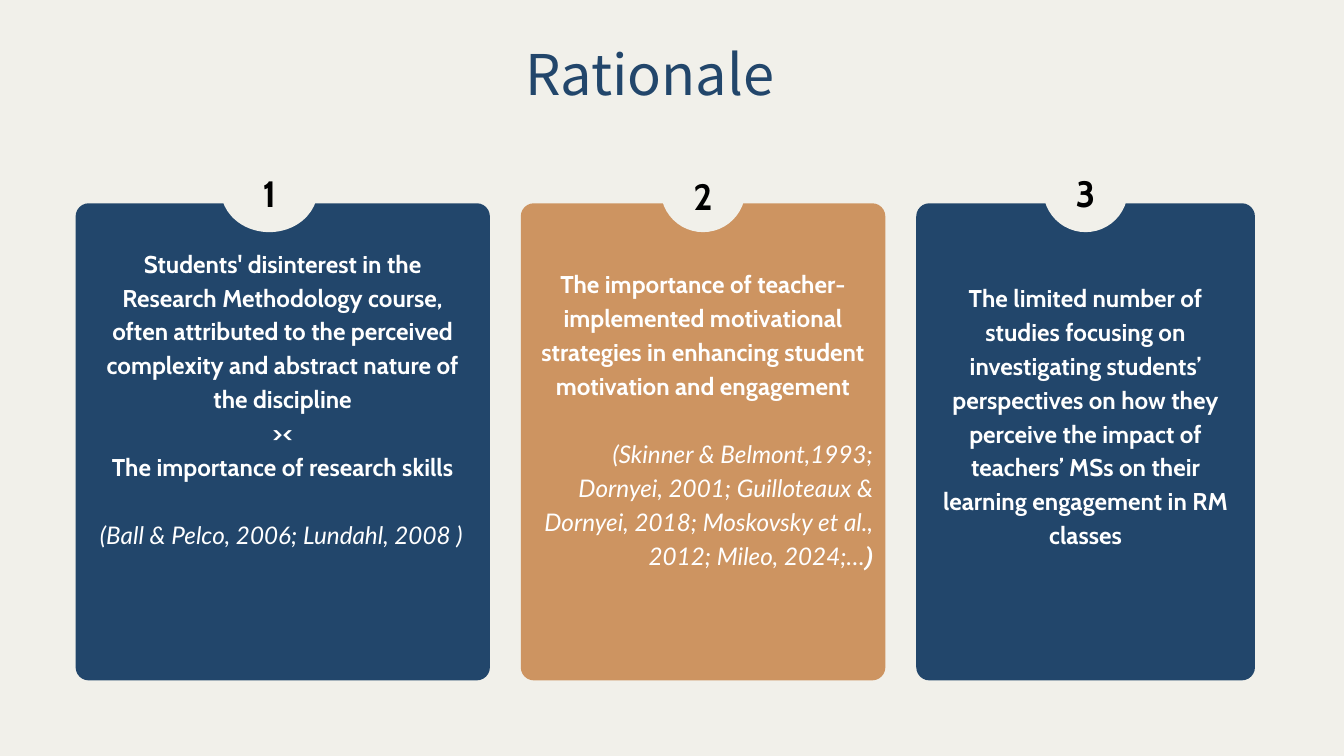
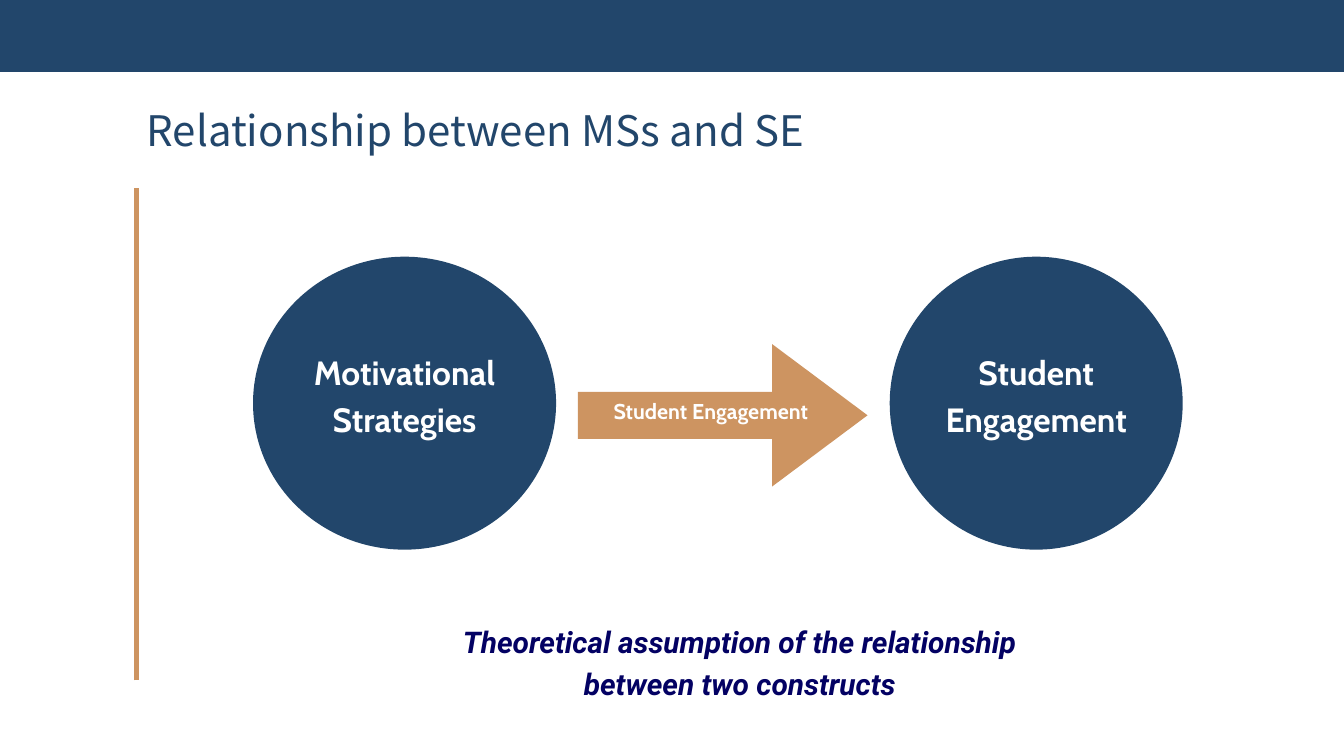
from dataclasses import dataclass

from lxml.etree import SubElement
from pptx import Presentation
from pptx.dml.color import RGBColor
from pptx.enum.shapes import MSO_CONNECTOR, MSO_SHAPE
from pptx.enum.text import MSO_ANCHOR, PP_ALIGN
from pptx.oxml.ns import qn
from pptx.util import Inches, Pt


@dataclass(frozen=True)
class Theme:
    """Colours and type styles shared by the slides."""
    navy = "22466B"
    tan = "CD9461"
    cream = "F1F0EA"
    white = "FFFFFF"

    # Each style: font, size, line pitch in points, colour, bold, italic
    title = dict(font="Noto Sans CJK SC", size=60, pitch=84, color=navy)
    heading = dict(title, size=45, pitch=54)
    number = dict(font="Cabin", size=39.2, pitch=61.6, color="000000", bold=True)
    body = dict(font="Cabin", size=26, pitch=36.4, color=white, bold=True)
    cite = dict(body, font="Lato", bold=False, italic=True)
    cite_end = dict(cite, font="Roboto", bold=True)
    node = dict(body, size=36, pitch=50.4)
    arrow = dict(body, size=23, pitch=32.2)
    caption = dict(font="Roboto", size=32, pitch=44.8, color="030163",
                   bold=True, italic=True)


@dataclass(frozen=True)
class Card:
    width: float
    fill: str
    paras: list
    text_top: float
    text_width: float
    notch_width: float = 5.04
    notch_shift: float = 0
    number_top: float = 9.36


def add_run(p, text, *, font, size, pitch, color, bold=False, italic=False):
    """Append formatted text to a paragraph."""
    p.line_spacing = Pt(pitch)
    r = p.add_run()
    r.text = text
    r.font.name, r.font.size = font, Pt(size)
    r.font.bold, r.font.italic = bold, italic
    r.font.color.rgb = RGBColor.from_string(color)


def para(*runs, align=PP_ALIGN.CENTER, before=0):
    """Describe a paragraph made of (text, style) runs."""
    return runs, align, before


class Deck:
    """Draws on a grid of 80 columns by 45 rows."""
    cols, rows = 80, 45

    def __init__(self, theme):
        self.theme = theme
        self.prs = Presentation()
        self.prs.slide_width, self.prs.slide_height = Inches(20), Inches(11.25)
        self.s = None

    def x(self, cols):
        return round(self.prs.slide_width * cols / self.cols)

    def y(self, rows):
        return round(self.prs.slide_height * rows / self.rows)

    def box(self, left, top, width, height):
        return self.x(left), self.y(top), self.x(width), self.y(height)

    def slide(self, color):
        self.s = self.prs.slides.add_slide(self.prs.slide_layouts[6])
        fill = self.s.background.fill
        fill.solid()
        fill.fore_color.rgb = RGBColor.from_string(color)

    def shape(self, kind, color, left, top, width, height, adjust=()):
        sp = self.s.shapes.add_shape(kind, *self.box(left, top, width, height))
        sp.shadow.inherit = False
        sp.fill.solid()
        sp.fill.fore_color.rgb = RGBColor.from_string(color)
        sp.line.fill.background()
        for i, value in enumerate(adjust):
            sp.adjustments[i] = value

    def text(self, paras, left, top, width, height, anchor=MSO_ANCHOR.TOP):
        tf = self.s.shapes.add_textbox(*self.box(left, top, width, height)).text_frame
        tf.word_wrap = True
        tf.vertical_anchor = anchor
        tf.margin_left = tf.margin_right = tf.margin_top = tf.margin_bottom = 0
        for i, (runs, align, before) in enumerate(paras):
            p = tf.add_paragraph() if i else tf.paragraphs[0]
            p.alignment = align
            if before:
                p.space_before = Pt(before)
            for text, style in runs:
                add_run(p, text, **style)

    def label(self, text, style, *area, anchor=MSO_ANCHOR.TOP):
        self.text([para((text, style))], *area, anchor=anchor)

    def line(self, color, weight, x1, y1, x2, y2):
        c = self.s.shapes.add_connector(
            MSO_CONNECTOR.STRAIGHT, self.x(x1), self.y(y1), self.x(x2), self.y(y2))
        c.line.color.rgb = RGBColor.from_string(color)
        c.line.width = Pt(weight)
        SubElement(c._element.spPr, qn("a:effectLst"))

    def card(self, number, card, left):
        """Rounded panel with a numbered notch in its top edge."""
        t, top, height, radius = self.theme, 12.1, 28.4, 0.78
        center = left + card.width / 2
        self.shape(MSO_SHAPE.ROUNDED_RECTANGLE, card.fill, left, top, card.width,
                   height, [radius / card.width])
        notch = center + card.notch_shift - card.notch_width / 2
        self.shape(MSO_SHAPE.OVAL, t.cream, notch, 8.78, card.notch_width, 5.04)
        self.label(str(number), t.number, notch, card.number_top, card.notch_width, 3.2)
        self.text(card.paras, center - card.text_width / 2, card.text_top,
                  card.text_width, top + height - card.text_top)

    def node(self, text, center, width):
        """Circle with a label slightly above its middle."""
        self.shape(MSO_SHAPE.OVAL, self.theme.navy, center - width / 2, 15.28,
                   width, 17.44)
        self.label(text, self.theme.node, center - 7, 15.6, 14, 15.5,
                   anchor=MSO_ANCHOR.MIDDLE)


def rationale(deck):
    t = deck.theme
    cite = dict(align=PP_ALIGN.RIGHT, before=t.body["pitch"])
    cards = [
        Card(24.66, t.navy, [
            para(("Students' disinterest in the Research Methodology course, often "
                  "attributed to the perceived complexity and abstract nature of "
                  "the discipline", t.body)),
            para(("><", t.body)),
            para(("The importance of research skills", t.body)),
            para(("(Ball & Pelco, 2006; Lundahl, 2008 ) ", t.cite), **cite),
        ], 14.52, 22.16, notch_width=5.76, notch_shift=-0.8),
        Card(21.7, t.tan, [
            para(("The importance of teacher-implemented motivational strategies in "
                  "enhancing student motivation and engagement", t.body)),
            para(("(Skinner & Belmont,1993; Dornyei, 2001; Guilloteaux & Dornyei, "
                  "2018; Moskovsky et al., 2012; Mileo, 2024;…", t.cite),
                 (")", t.cite_end), **cite),
        ], 15.76, 20.28, number_top=9.52),
        Card(20.16, t.navy, [
            para(("The limited number of studies focusing on investigating students’ "
                  "perspectives on how they perceive the impact of teachers’ MSs on "
                  "their learning engagement in RM classes", t.body)),
        ], 16.55, 17.52),
    ]
    deck.slide(t.cream)
    left, gap = 4.5, 1.84
    for number, card in enumerate(cards, 1):
        deck.card(number, card, left)
        left += card.width + gap
    deck.label("Rationale", t.title, 19.44, 1.68, 38.48, 4.4)


def relationship(deck):
    t = deck.theme
    deck.slide(t.white)
    # Top band, heading and side rule
    deck.shape(MSO_SHAPE.RECTANGLE, t.navy, 0, 0, deck.cols, 4.28)
    deck.label("Relationship between MSs and SE", t.heading, 0, 6.2, 56.6, 3.04)
    deck.line(t.tan, 5.25, 8.12, 40.5, 8.12, 11.2)
    # Two constructs joined by an arrow
    deck.node("Motivational Strategies", 24.08, 18.04)
    deck.node("Student Engagement", 61.68, 17.44)
    deck.shape(MSO_SHAPE.RIGHT_ARROW, t.tan, 34.4, 20.48, 17.24, 8.48, [0.33, 0.67])
    deck.label("Student Engagement", t.arrow, 34.4, 22.64, 15.84, 3.44,
               anchor=MSO_ANCHOR.MIDDLE)
    # Caption
    deck.label("Theoretical assumption of the relationship between two constructs",
               t.caption, 24.08, 36.76, 39.92, 7.28)


def main():
    deck = Deck(Theme())
    rationale(deck)
    relationship(deck)
    deck.prs.save("out.pptx")


if __name__ == "__main__":
    main()
